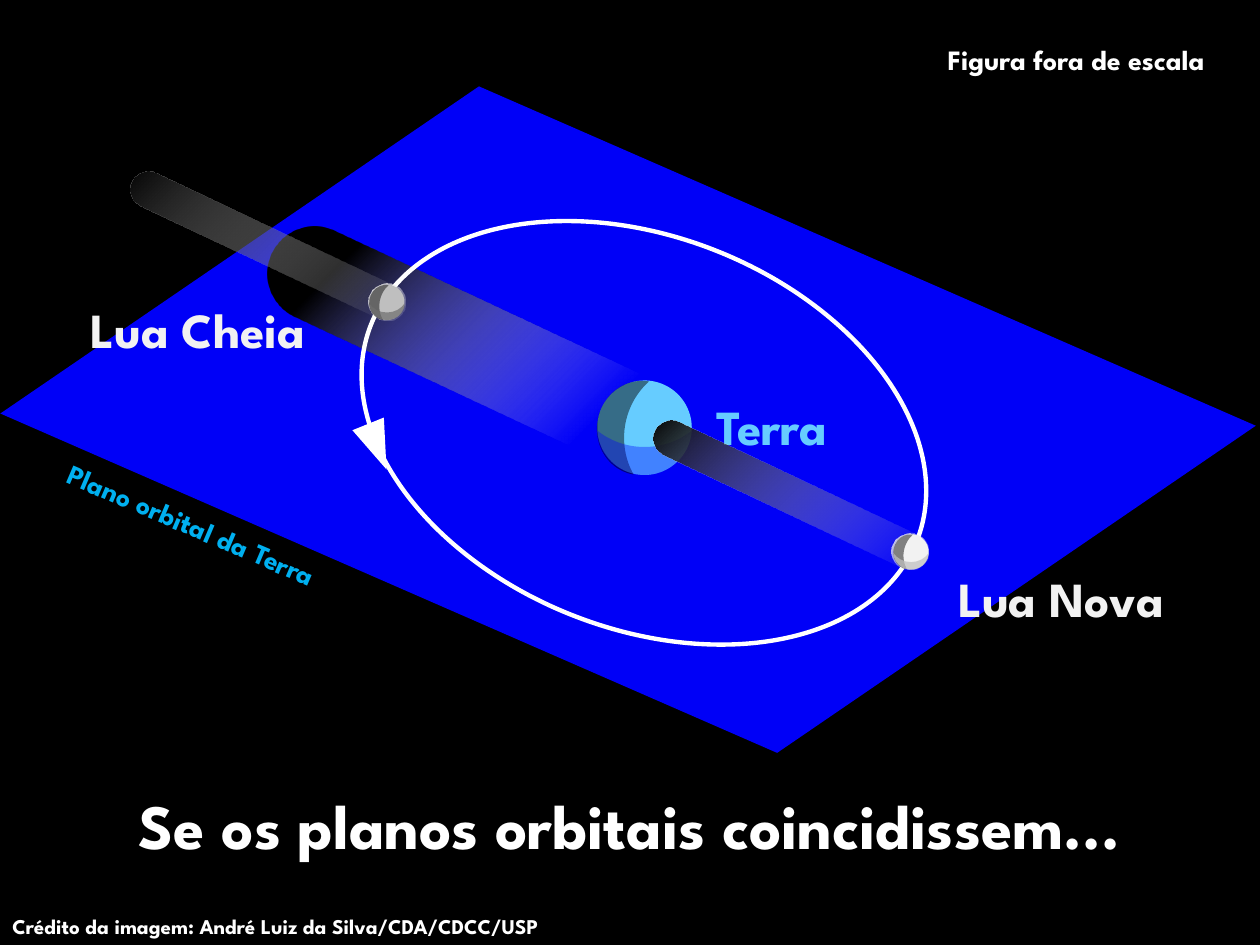
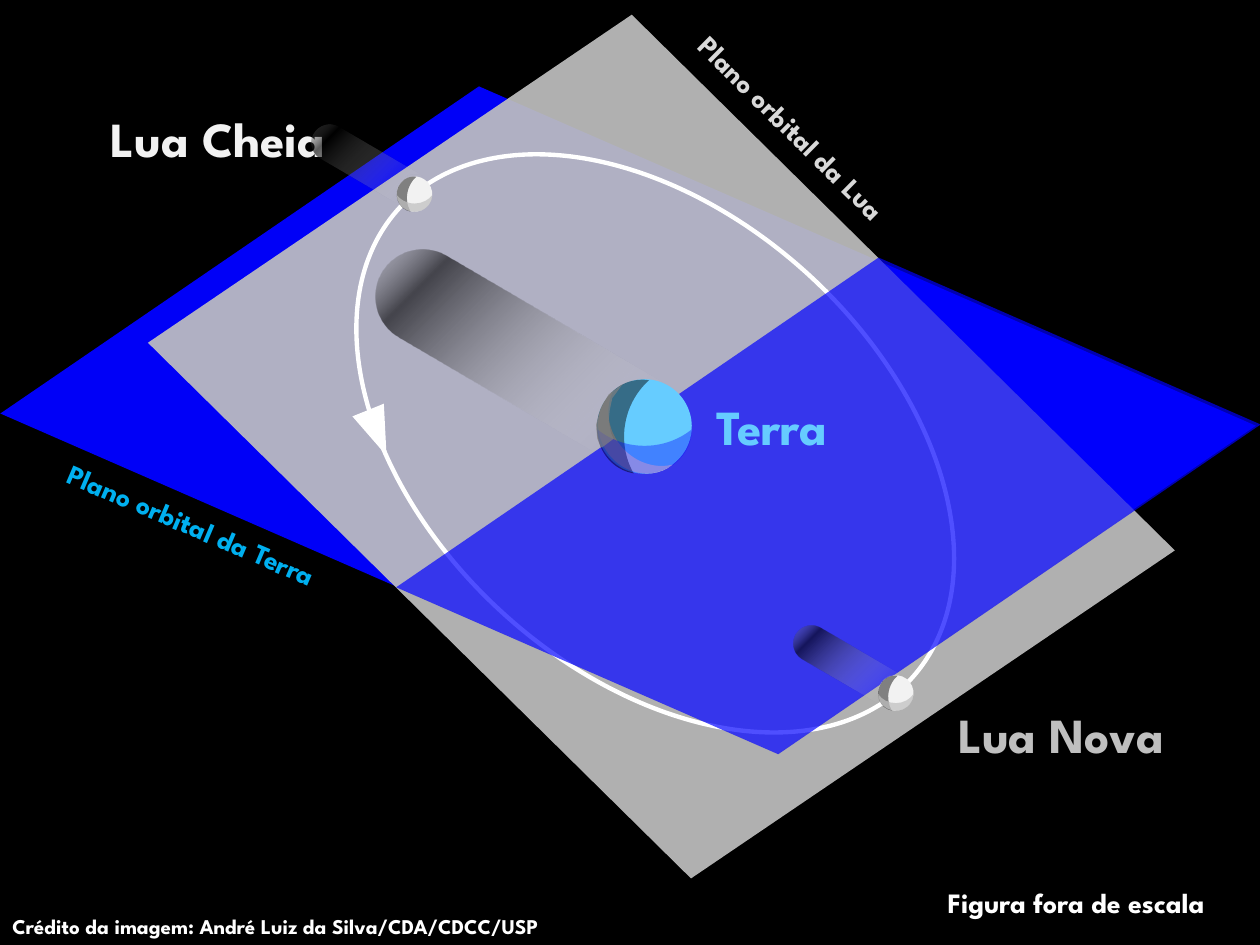
import dataclasses
import typing

import lxml.etree
import pptx
import pptx.dml.color
import pptx.enum.shapes
import pptx.enum.text
import pptx.oxml.ns
import pptx.util

Pt = pptx.util.Pt
RGBColor = pptx.dml.color.RGBColor
Preset = pptx.enum.shapes.MSO_SHAPE
Align = pptx.enum.text.PP_ALIGN
qn = pptx.oxml.ns.qn

FONT = "League Spartan"
BLACK = RGBColor(0x00, 0x00, 0x00)
WHITE = RGBColor(0xFF, 0xFF, 0xFF)
PLANE_BLUE = RGBColor(0x00, 0x00, 0xFF)
EARTH_BLUE = RGBColor(0x66, 0xCC, 0xFF)
LABEL_BLUE = RGBColor(0x00, 0xB0, 0xF0)
MOON_WHITE = RGBColor(0xF2, 0xF2, 0xF2)
PALE_GREY = RGBColor(0xD9, 0xD9, 0xD9)
SILVER = RGBColor(0xC0, 0xC0, 0xC0)
PLANE_GREY = RGBColor(0xBF, 0xBF, 0xBF)
MID_GREY = RGBColor(0x80, 0x80, 0x80)
DARK_GREY = RGBColor(0x70, 0x70, 0x70)

EARTH_SIZE = 54
MOON_SIZE = 20.2
MOON_SHADOW_WIDTH = 20.9


class Stop(typing.NamedTuple):
    position: float
    color: RGBColor
    opacity: float


# Shadow gradients: position and opacity in percent
EARTH_SHADOW = (Stop(0, PLANE_GREY, 0), Stop(25, WHITE, 0), Stop(81, BLACK, 100))
MOON_SHADOW = (Stop(0, PLANE_GREY, 0), Stop(0, WHITE, 0), Stop(100, BLACK, 100))
SHORT_SHADOW = (Stop(25, WHITE, 0), Stop(81, BLACK, 61), Stop(100, PLANE_GREY, 0))


@dataclasses.dataclass(frozen=True)
class Figure:
    preset: Preset
    left: float
    top: float
    width: float
    height: float
    angle: float = 0
    color: typing.Optional[RGBColor] = None
    opacity: float = 100
    adjust: typing.Optional[float] = None
    gradient: tuple[Stop, ...] = ()
    line: typing.Optional[RGBColor] = None


@dataclasses.dataclass(frozen=True)
class Patch:
    points: tuple[tuple[float, float], ...]
    color: RGBColor
    opacity: float


@dataclasses.dataclass(frozen=True)
class Caption:
    text: str
    left: float
    top: float
    width: float
    height: float
    size: float
    color: RGBColor = WHITE
    angle: float = 0
    align: Align = Align.CENTER
    wrap: bool = True


Part = typing.Union[Figure, Patch, Caption]


# Parts of the scene

def globe(left: float, top: float, size: float, color: RGBColor,
          south: RGBColor, south_opacity: float, south_adjust: float) -> list[Figure]:
    """A ball with its night side and its darker southern side."""
    crescent = 0.47 * size
    inset = (size - crescent) / 2
    return [
        Figure(Preset.OVAL, left, top, size, size, 351.5, color),
        Figure(Preset.MOON, left, top - 0.035 * size, crescent, size, 9.4,
               BLACK, 47, 0.629),
        Figure(Preset.MOON, left + inset, top + inset, crescent, size, 270,
               south, south_opacity, south_adjust),
    ]


def earth(top: float) -> list[Figure]:
    return globe(341.3, top, EARTH_SIZE, EARTH_BLUE, PLANE_BLUE, 36, 0.629)


def moon(left: float, top: float, color: RGBColor = MOON_WHITE,
         south: RGBColor = SILVER, south_adjust: float = 0.453) -> list[Figure]:
    return globe(left, top, MOON_SIZE, color, south, 72, south_adjust)


def shadow(left: float, top: float, width: float, length: float, angle: float,
           gradient: tuple[Stop, ...]) -> Figure:
    return Figure(Preset.CAN, left, top, width, length, angle,
                  adjust=1.003, gradient=gradient)


def plane(left: float, top: float, width: float, height: float, opacity: float,
          angle: float = 23.6, adjust: float = 0.626,
          color: RGBColor = PLANE_BLUE) -> Figure:
    return Figure(Preset.PARALLELOGRAM, left, top, width, height, angle,
                  color, opacity, adjust)


def orbit(left: float, top: float, width: float, height: float, angle: float) -> Figure:
    return Figure(Preset.OVAL, left, top, width, height, angle, line=WHITE)


def orbit_arrow(top: float) -> Figure:
    return Figure(Preset.ISOSCELES_TRIANGLE, 205.9, top, 19.4, 28.1, 158, WHITE)


def moon_label(text: str, left: float, top: float,
               color: RGBColor = MOON_WHITE) -> Caption:
    return Caption(text, left, top, 164.2, 41, 28, color)


def scale_note(top: float) -> Caption:
    return Caption("Figura fora de escala", 524.2, top, 181.4, 26.6, 16, wrap=False)


# Shared by both slides
EARTH_PLANE = plane(28.8, 99.4, 660.2, 280.8, 97)
EARTH_PLANE_LABEL = Caption("Plano orbital da Terra", 18.7, 286.6, 181.4, 26.6, 16,
                            LABEL_BLUE, 23.2, wrap=False)
EARTH_LABEL = Caption("Terra", 400.3, 223.2, 81.4, 41, 28, EARTH_BLUE, wrap=False)
CREDIT = Caption("Crédito da imagem: André Luiz da Silva/CDA/CDCC/USP",
                 0, 518.4, 380.2, 21.6, 12, align=Align.LEFT)

COINCIDING_PLANES: list[Part] = [
    EARTH_PLANE_LABEL,
    EARTH_PLANE,
    shadow(247, 69.8, EARTH_SIZE, 261.4, 115, EARTH_SHADOW),
    *earth(217.4),
    CREDIT,
    EARTH_LABEL,
    orbit(200.2, 135.4, 335.5, 223.9, 21.6),
    shadow(441.4, 197.3, MOON_SHADOW_WIDTH, 171.4, 115.3, MOON_SHADOW),
    *moon(510.5, 305.3),
    shadow(142.6, 54.7, MOON_SHADOW_WIDTH, 171.4, 115.3, MOON_SHADOW),
    *moon(211, 162.7, PLANE_GREY, DARK_GREY),
    orbit_arrow(241.2),
    Caption("Se os planos orbitais coincidissem...", 0, 445.7, 720, 51.1, 36),
    moon_label("Lua Cheia", 31, 167.8),
    moon_label("Lua Nova", 524.2, 321.1),
    scale_note(20.9),
]

earth_ball, *earth_shades = earth(216.7)
TILTED_PLANES: list[Part] = [
    EARTH_PLANE,
    plane(127.4, 91.4, 501.1, 327.6, 92, 44.6, 0.199, PLANE_GREY),
    orbit(175.7, 123.1, 397.4, 260.6, 42.6),
    plane(265.7, 147.6, 415.4, 283, 69),
    shadow(278.6, 105.8, EARTH_SIZE, 202.3, 120.4, SHORT_SHADOW),
    earth_ball,
    Figure(Preset.MOON, 345.6, 225.4, 24.5, EARTH_SIZE, 320.6, PALE_GREY, 94, 0.341),
    *earth_shades,
    CREDIT,
    EARTH_LABEL,
    moon_label("Lua Cheia", 42.5, 58.3),
    moon_label("Lua Nova", 524.2, 398.9, PLANE_GREY),
    shadow(202.3, 57.6, MOON_SHADOW_WIDTH, 77, 120.4, SHORT_SHADOW),
    *moon(226.8, 100.8, south_adjust=0.497),
    shadow(477.4, 343.4, MOON_SHADOW_WIDTH, 77, 120.4, SHORT_SHADOW),
    *moon(501.8, 385.9),
    Caption("Plano orbital da Lua", 367.2, 59.8, 170.6, 26.6, 16,
            PALE_GREY, 44.6, wrap=False),
    orbit_arrow(233.3),
    # Grey veil over the western edge of the Earth
    Patch(((355.7, 219.6), (352.1, 224.6), (349.9, 227.5), (348.5, 234),
           (347.8, 240.5), (349.2, 247.7), (350.6, 250.6), (349.9, 251.3),
           (344.2, 255.6), (343.4, 255.6), (341.3, 250.6), (340.6, 242.6),
           (343.4, 233.3), (347.8, 225.4)), MID_GREY, 69),
    EARTH_PLANE_LABEL,
    scale_note(502.6),
]


# Drawing

def add_alpha(color_element, opacity: float) -> None:
    if opacity < 100:
        alpha = lxml.etree.SubElement(color_element, qn("a:alpha"))
        alpha.set("val", str(round(opacity * 1000)))


def fill_solid(shape, color: RGBColor, opacity: float) -> None:
    shape.fill.solid()
    shape.fill.fore_color.rgb = color
    add_alpha(shape.element.spPr.find(qn("a:solidFill"))[0], opacity)


def fill_radial(shape, stops: tuple[Stop, ...]) -> None:
    """Circular gradient centred on the lower right corner."""
    shape.fill.background()
    properties = shape.element.spPr
    gradient = lxml.etree.Element(qn("a:gradFill"), rotWithShape="1")
    stop_list = lxml.etree.SubElement(gradient, qn("a:gsLst"))
    for stop in stops:
        entry = lxml.etree.SubElement(stop_list, qn("a:gs"),
                                      pos=str(stop.position * 1000))
        color = lxml.etree.SubElement(entry, qn("a:srgbClr"), val=str(stop.color))
        add_alpha(color, stop.opacity)
    circle = lxml.etree.SubElement(gradient, qn("a:path"))
    circle.set("path", "circle")
    lxml.etree.SubElement(circle, qn("a:fillToRect"), l="100000", t="100000")
    properties.replace(properties.find(qn("a:noFill")), gradient)


def draw_figure(slide, figure: Figure) -> None:
    shape = slide.shapes.add_shape(figure.preset, Pt(figure.left), Pt(figure.top),
                                   Pt(figure.width), Pt(figure.height))
    shape.rotation = figure.angle
    shape.shadow.inherit = False
    if figure.adjust is not None:
        shape.adjustments[0] = figure.adjust
    if figure.gradient:
        fill_radial(shape, figure.gradient)
    elif figure.color is not None:
        fill_solid(shape, figure.color, figure.opacity)
    else:
        shape.fill.background()
    if figure.line is not None:
        shape.line.color.rgb = figure.line
        shape.line.width = Pt(2.5)
    else:
        shape.line.fill.background()


def draw_patch(slide, patch: Patch) -> None:
    start, *others = [(Pt(x), Pt(y)) for x, y in patch.points]
    builder = slide.shapes.build_freeform(*start)
    builder.add_line_segments(others, close=True)
    shape = builder.convert_to_shape()
    shape.shadow.inherit = False
    fill_solid(shape, patch.color, patch.opacity)
    shape.line.fill.background()


def draw_caption(slide, caption: Caption) -> None:
    box = slide.shapes.add_textbox(Pt(caption.left), Pt(caption.top),
                                   Pt(caption.width), Pt(caption.height))
    box.rotation = caption.angle
    frame = box.text_frame
    frame.word_wrap = caption.wrap
    frame.auto_size = pptx.enum.text.MSO_AUTO_SIZE.SHAPE_TO_FIT_TEXT
    paragraph = frame.paragraphs[0]
    paragraph.alignment = caption.align
    run = paragraph.add_run()
    run.text = caption.text
    run.font.name = FONT
    run.font.size = Pt(caption.size)
    run.font.bold = True
    run.font.color.rgb = caption.color


DRAWERS = {Figure: draw_figure, Patch: draw_patch, Caption: draw_caption}


def main() -> None:
    deck = pptx.Presentation()
    deck.slide_width, deck.slide_height = Pt(720), Pt(540)
    for scene in (COINCIDING_PLANES, TILTED_PLANES):
        slide = deck.slides.add_slide(deck.slide_layouts[6])
        slide.background.fill.solid()
        slide.background.fill.fore_color.rgb = BLACK
        for part in scene:
            DRAWERS[type(part)](slide, part)
    deck.save("out.pptx")


if __name__ == "__main__":
    main()
